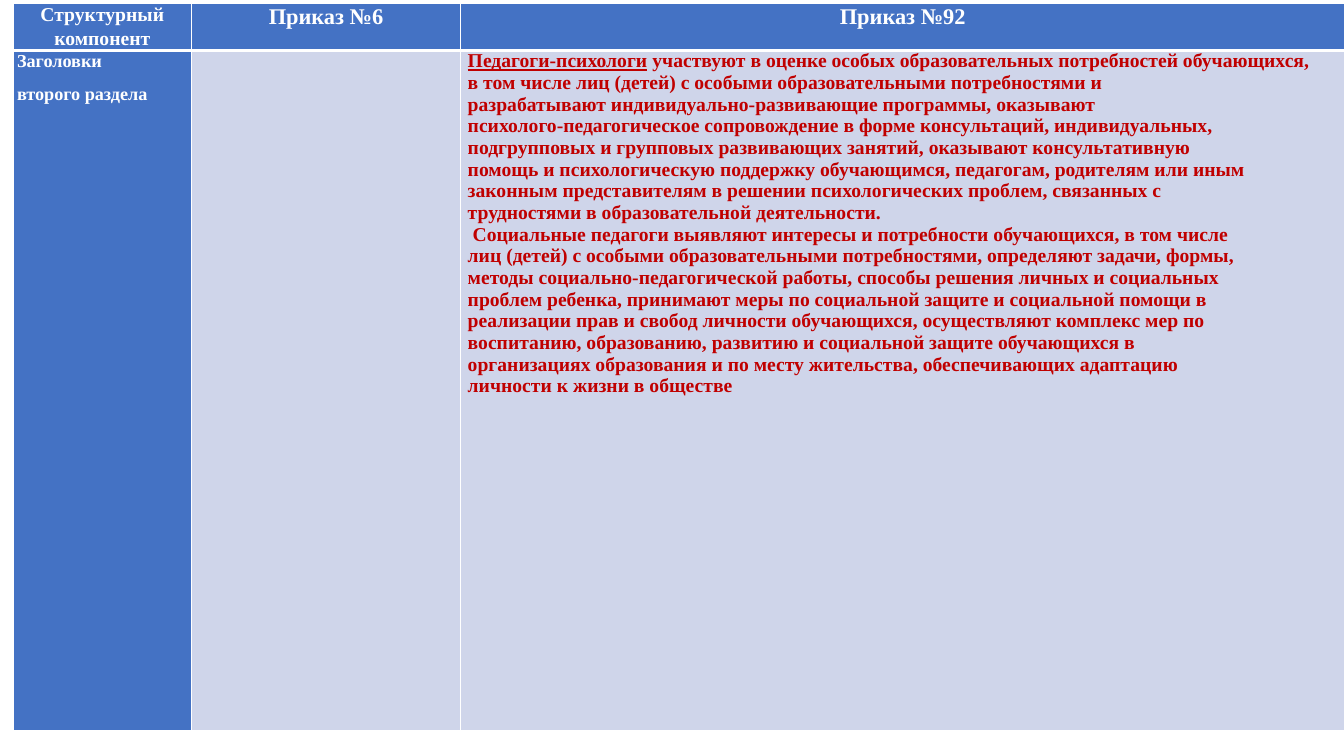
from lxml import etree
from pptx import Presentation
from pptx import util as u
from pptx.dml.color import RGBColor
from pptx.enum import text
from pptx.oxml.ns import qn

FONT = "Times New Roman"
BLUE, PALE, WHITE, RED = "4472C4", "CFD5EA", "FFFFFF", "C00000"
COLUMNS = (1.77, 2.67, 8.77)
ROWS = (0.47, 6.75)
HEADERS = (("Структурный компонент", 14), ("Приказ №6", 16), ("Приказ №92", 16))
SECTION = ("Заголовки", "второго раздела")
LEAD = "Педагоги-психологи"
DUTIES = (
    " участвуют в оценке особых образовательных потребностей обучающихся,",
    "в том числе лиц (детей) с особыми образовательными потребностями и",
    "разрабатывают индивидуально-развивающие программы, оказывают",
    "психолого-педагогическое сопровождение в форме консультаций, индивидуальных,",
    "подгрупповых и групповых развивающих занятий, оказывают консультативную",
    "помощь и психологическую поддержку обучающимся, педагогам, родителям или иным",
    "законным представителям в решении психологических проблем, связанных с",
    "трудностями в образовательной деятельности.",
    " Социальные педагоги выявляют интересы и потребности обучающихся, в том числе",
    "лиц (детей) с особыми образовательными потребностями, определяют задачи, формы,",
    "методы социально-педагогической работы, способы решения личных и социальных",
    "проблем ребенка, принимают меры по социальной защите и социальной помощи в",
    "реализации прав и свобод личности обучающихся, осуществляют комплекс мер по",
    "воспитанию, образованию, развитию и социальной защите обучающихся в",
    "организациях образования и по месту жительства, обеспечивающих адаптацию",
    "личности к жизни в обществе",
)


def color(value):
    return RGBColor.from_string(value)


def add_span(para, words, size=14, ink=WHITE, underline=None):
    span = para.add_run()
    span.text = words
    font = span.font
    font.name, font.size, font.bold = FONT, u.Pt(size), True
    font.color.rgb = color(ink)
    font.underline = underline


def add_para(cell, index, align=text.PP_ALIGN.LEFT, spacing=1.0, after=0):
    frame = cell.text_frame
    para = frame.paragraphs[0] if index == 0 else frame.add_paragraph()
    para.alignment, para.line_spacing, para.space_after = align, spacing, u.Pt(after)
    return para


def style_cell(cell, fill, side=0.04, bottom=1):
    cell.margin_left = cell.margin_right = u.Inches(side)
    cell.margin_top = cell.margin_bottom = 0
    # Borders come before the fill in the cell properties
    properties = cell._tc.get_or_add_tcPr()
    for edge, width in (("L", 1), ("R", 1), ("T", 1), ("B", bottom)):
        line = etree.SubElement(properties, qn(f"a:ln{edge}"), w=str(u.Pt(width)))
        solid = etree.SubElement(line, qn("a:solidFill"))
        etree.SubElement(solid, qn("a:srgbClr"), val=WHITE)
    cell.fill.solid()
    cell.fill.fore_color.rgb = color(fill)


def add_grid(page):
    frame = page.shapes.add_table(
        len(ROWS), len(COLUMNS), u.Inches(0.13), u.Inches(0.03),
        u.Inches(sum(COLUMNS)), u.Inches(sum(ROWS)))
    table = frame.table
    for column, width in zip(table.columns, COLUMNS):
        column.width = u.Inches(width)
    for row, height in zip(table.rows, ROWS):
        row.height = u.Inches(height)
    return table


def fill_headers(table):
    for index, (words, size) in enumerate(HEADERS):
        cell = table.cell(0, index)
        style_cell(cell, BLUE, bottom=3)
        add_span(add_para(cell, 0, text.PP_ALIGN.CENTER, 1.07, 8), words, size)


def fill_section(table):
    section, empty, duties = (table.cell(1, index) for index in range(3))
    style_cell(section, BLUE)
    for index, words in enumerate(SECTION):
        add_span(add_para(section, index, spacing=1.07, after=8), words, 13)
    style_cell(empty, PALE)
    style_cell(duties, PALE, side=0.07)
    for index, words in enumerate(DUTIES):
        para = add_para(duties, index)
        if index == 0:
            add_span(para, LEAD, ink=RED, underline=True)
        add_span(para, words, ink=RED)


def main():
    deck = Presentation()
    deck.slide_width, deck.slide_height = u.Inches(13.33), u.Inches(7.5)
    page = deck.slides.add_slide(deck.slide_layouts[6])
    # Comparison table
    table = add_grid(page)
    fill_headers(table)
    fill_section(table)
    deck.save("out.pptx")


if __name__ == "__main__":
    main()
